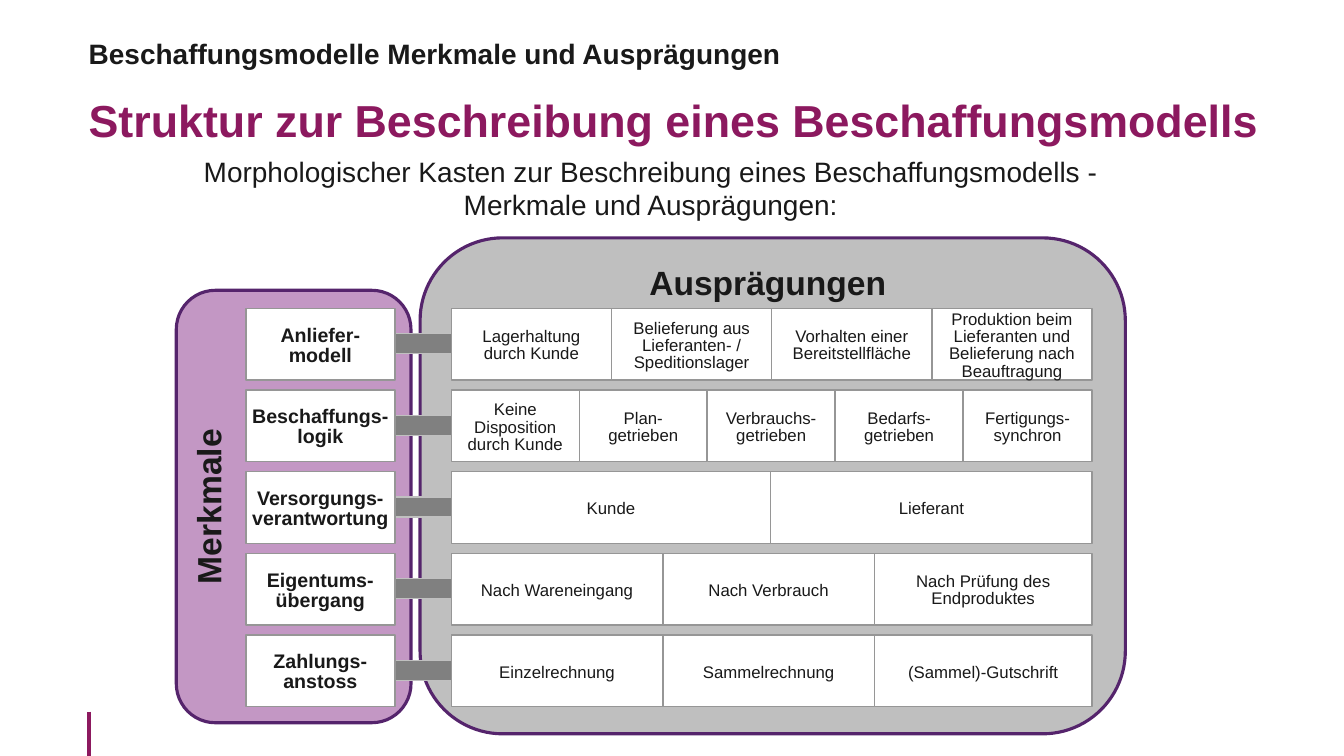
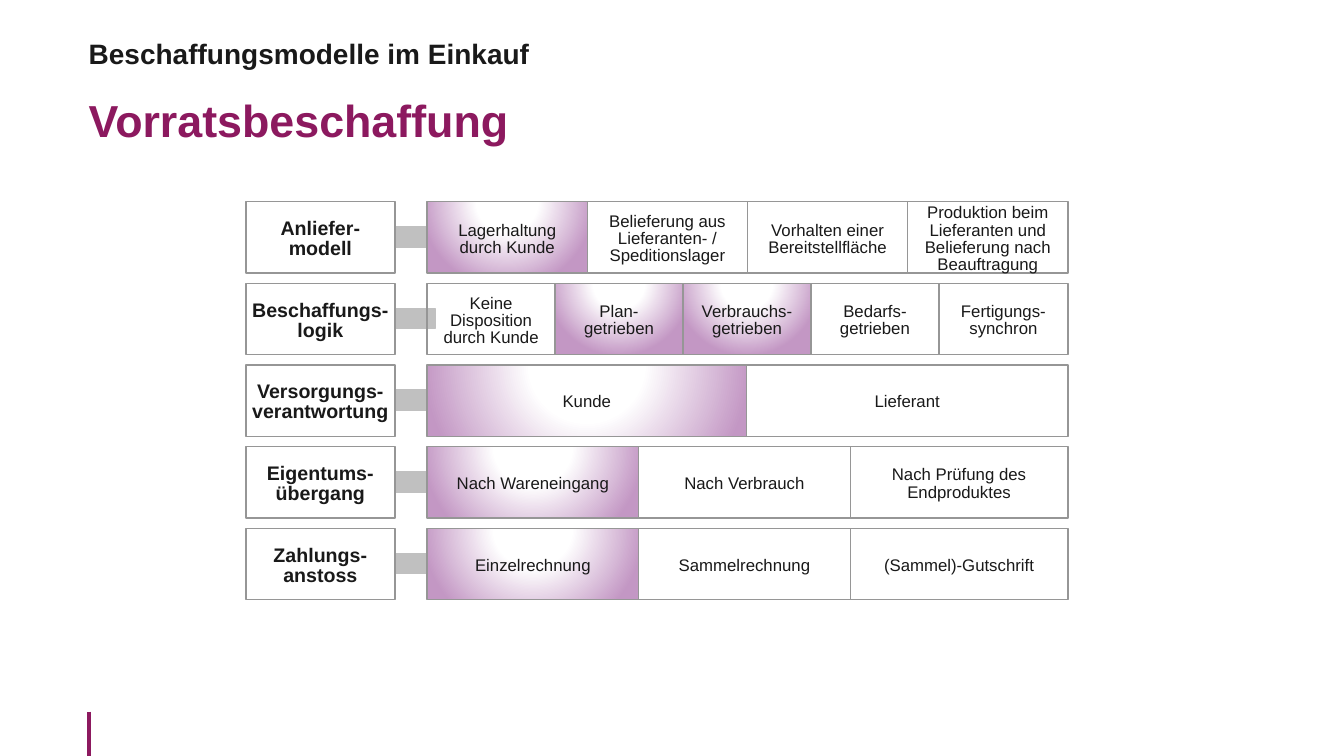
from dataclasses import dataclass

from pptx import Presentation
from pptx.dml.color import RGBColor
from pptx.enum.shapes import MSO_CONNECTOR, MSO_SHAPE
from pptx.enum.text import MSO_ANCHOR, PP_ALIGN
from pptx.oxml import parse_xml
from pptx.oxml.ns import nsdecls, qn
from pptx.util import Inches, Pt

RECTANGLE = MSO_SHAPE.RECTANGLE
ROUNDED = MSO_SHAPE.ROUNDED_RECTANGLE
STRAIGHT = MSO_CONNECTOR.STRAIGHT
TOP, MIDDLE = MSO_ANCHOR.TOP, MSO_ANCHOR.MIDDLE
LEFT, CENTER = PP_ALIGN.LEFT, PP_ALIGN.CENTER


@dataclass(frozen=True)
class Theme:
    font: str = "Arial"
    text: str = "191919"
    accent: str = "8C195F"
    panel_line: str = "55246C"
    lilac: str = "C397C4"
    panel_gray: str = "BFBFBF"
    dark_gray: str = "808080"
    light_gray: str = "C0C0C0"
    cell_line: str = "969696"
    white: str = "FFFFFF"
    title_size: int = 32
    panel_size: int = 24
    heading_size: int = 20
    label_size: int = 14
    cell_size: int = 12


theme = Theme()

HIGHLIGHT = f"""<a:gradFill {nsdecls("a")} rotWithShape="1">
<a:gsLst>
<a:gs pos="0"><a:srgbClr val="{theme.white}"/></a:gs>
<a:gs pos="35000"><a:srgbClr val="{theme.white}"/></a:gs>
<a:gs pos="100000"><a:srgbClr val="{theme.lilac}"/></a:gs>
</a:gsLst>
<a:path path="circle"><a:fillToRect l="50000" t="-80000" r="50000" b="180000"/></a:path>
</a:gradFill>"""


def write_text(shape, text, size, bold=False, color=theme.text, align=CENTER,
               anchor=MIDDLE, insets=(0, 0, 0, 0), spacing=None, wrap=True):
    frame = shape.text_frame
    frame.word_wrap = wrap
    frame.vertical_anchor = anchor
    (frame.margin_left, frame.margin_top,
     frame.margin_right, frame.margin_bottom) = [Inches(inset) for inset in insets]
    paragraph = frame.paragraphs[0]
    paragraph.text = text
    paragraph.alignment = align
    paragraph.line_spacing = spacing
    for run in paragraph.runs:
        run.font.name = theme.font
        run.font.size = Pt(size)
        run.font.bold = bold
        run.font.color.rgb = RGBColor.from_string(color)


def add_box(slide, left, top, width, height, fill, line, line_width=1, kind=RECTANGLE):
    shape = slide.shapes.add_shape(
        kind, Inches(left), Inches(top), Inches(width), Inches(height))
    shape.shadow.inherit = False
    shape.line.color.rgb = RGBColor.from_string(line)
    shape.line.width = Pt(line_width)
    if fill is None or fill == HIGHLIGHT:
        shape.fill.background()
    else:
        shape.fill.solid()
        shape.fill.fore_color.rgb = RGBColor.from_string(fill)
    if fill == HIGHLIGHT:
        properties = shape._element.spPr
        properties.replace(properties.find(qn("a:noFill")), parse_xml(fill))
    return shape


ROW_PITCH, ROW_HEIGHT = 0.81, 0.71
LABEL_LEFT, LABEL_WIDTH = 2.44, 1.48
BAR_LEFT, BAR_OFFSET, BAR_HEIGHT = 3.86, 0.25, 0.2
OPTIONS_WIDTH = 6.36

features = [
    ("Anliefer-\nmodell", 1.59, [
        "Lagerhaltung\ndurch Kunde",
        "Belieferung aus\nLieferanten- /\nSpeditionslager",
        "Vorhalten einer\nBereitstellfläche",
        "Produktion beim Lieferanten und Belieferung nach Beauftragung"]),
    ("Beschaffungs-\nlogik", 1.27, [
        "Keine Disposition durch Kunde", "Plan-\ngetrieben", "Verbrauchs-getrieben",
        "Bedarfs-getrieben", "Fertigungs-synchron"]),
    ("Versorgungs-\nverantwortung", 3.17, ["Kunde", "Lieferant"]),
    ("Eigentums-\nübergang", 2.1, [
        "Nach Wareneingang", "Nach Verbrauch", "Nach Prüfung des Endproduktes"]),
    ("Zahlungs-\nanstoss", 2.1, [
        "Einzelrechnung", "Sammelrechnung", "(Sammel)-Gutschrift"]),
]

pages = [
    dict(heading="Beschaffungsmodelle Merkmale und Ausprägungen",
         title="Struktur zur Beschreibung eines Beschaffungsmodells",
         subtitle="Morphologischer Kasten zur Beschreibung eines Beschaffungsmodells -\n"
                  "Merkmale und Ausprägungen:",
         panels=[
             ("Ausprägungen", (4.17, 2.36, 7, 4.92), theme.panel_gray, (0, 0, 0.1, 0.05), "horz"),
             ("Merkmale", (1.75, 2.88, 2.33, 4.29), theme.lilac, (0, 0.05, 0.1, 0.05), "vert270")],
         top=3.06, options_left=4.48, bar_width=0.62, bar_fill=theme.dark_gray,
         cell_fill=theme.white, selected=[(), (), (), (), ()]),
    dict(heading="Beschaffungsmodelle im Einkauf",
         title="Vorratsbeschaffung",
         subtitle=None, panels=[],
         top=2, options_left=4.24, bar_width=0.46, bar_fill=theme.light_gray,
         cell_fill=None, selected=[(0,), (1, 2), (0,), (0,), (0,)]),
]

presentation = Presentation()
presentation.slide_width = Inches(13.34)
presentation.slide_height = Inches(7.5)

for page in pages:
    slide = presentation.slides.add_slide(presentation.slide_layouts[6])

    footer_line = slide.shapes.add_connector(
        STRAIGHT, Inches(0.88), Inches(7.06), Inches(0.88), Inches(7.5))
    footer_line.line.color.rgb = RGBColor.from_string(theme.accent)
    footer_line.line.width = Pt(3)
    footer_line._element.spPr.append(parse_xml(f"<a:effectLst {nsdecls('a')}/>"))

    for text, bounds, fill, insets, direction in page["panels"]:
        panel = add_box(slide, *bounds, fill, theme.panel_line, 2.25, ROUNDED)
        write_text(panel, text, theme.panel_size, bold=True, anchor=TOP, insets=insets)
        panel.text_frame._txBody.bodyPr.set("vert", direction)

    heading = slide.shapes.add_textbox(Inches(0.88), Inches(0.37), Inches(12.09), Inches(0.31))
    write_text(heading, page["heading"], theme.heading_size, bold=True, align=LEFT)
    title = slide.shapes.add_textbox(Inches(0.88), Inches(0.76), Inches(12.09), Inches(0.75))
    write_text(title, page["title"], theme.title_size, bold=True, color=theme.accent,
               align=LEFT, spacing=1.2)
    if page["subtitle"]:
        subtitle = slide.shapes.add_textbox(
            Inches(0.88), Inches(1.53), Inches(11.16), Inches(0.75))
        write_text(subtitle, page["subtitle"], theme.heading_size, anchor=TOP, wrap=False)

    for row, (label, option_width, options) in enumerate(features):
        top = page["top"] + row * ROW_PITCH
        label_box = add_box(slide, LABEL_LEFT, top, LABEL_WIDTH, ROW_HEIGHT,
                            theme.white, theme.cell_line)
        bar = add_box(slide, BAR_LEFT, top + BAR_OFFSET, page["bar_width"], BAR_HEIGHT,
                      page["bar_fill"], theme.light_gray)
        label_box._element.addprevious(bar._element)
        write_text(label_box, label, theme.label_size, bold=True,
                   insets=(0.1, 0.09, 0.1, 0.05), spacing=0.85, wrap=False)

        for column, option in enumerate(options):
            offset = column * option_width
            is_last = column == len(options) - 1
            width = OPTIONS_WIDTH - offset if is_last else option_width
            fill = HIGHLIGHT if column in page["selected"][row] else page["cell_fill"]
            cell = add_box(slide, page["options_left"] + offset, top, width, ROW_HEIGHT,
                           fill, theme.cell_line)
            write_text(cell, option, theme.cell_size,
                       insets=(0.04, 0.09, 0.04, 0.05), spacing=0.85)

presentation.save("out.pptx")
